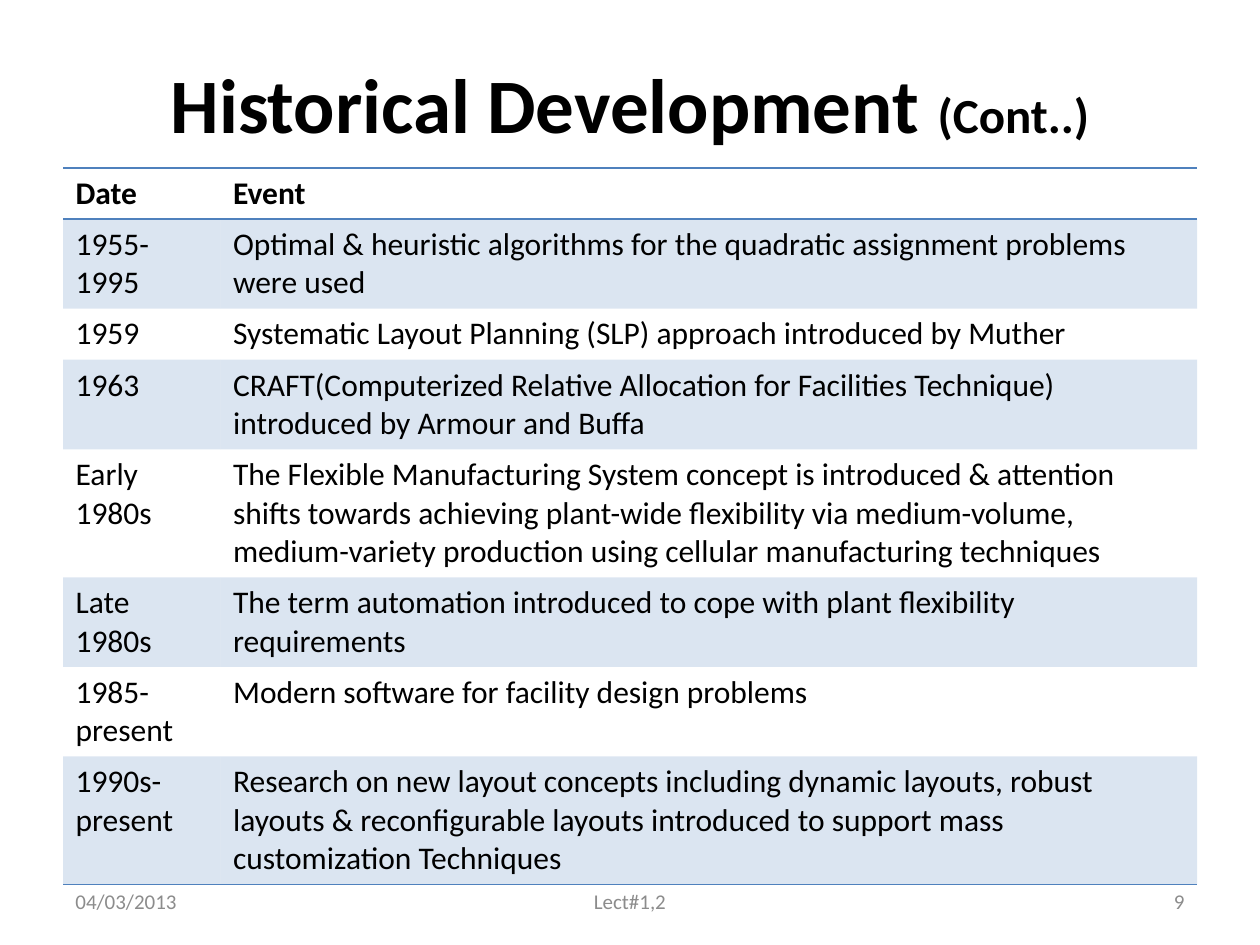
from dataclasses import dataclass
from typing import NamedTuple

from lxml.etree import SubElement
from pptx import Presentation
from pptx.dml.color import RGBColor
from pptx.enum.text import MSO_ANCHOR, PP_ALIGN
from pptx.oxml import parse_xml
from pptx.oxml.ns import nsdecls, qn
from pptx.util import Pt


@dataclass(frozen=True)
class Theme:
    font: str = "Calibri"
    text: str = "000000"
    muted: str = "8C8C8C"
    accent: str = "4F81BD"
    band_opacity: int = 20
    title_size: float = 44
    suffix_size: float = 28
    table_size: float = 18
    footer_size: float = 12


class Event(NamedTuple):
    date: str
    description: str


class FooterItem(NamedTuple):
    text: str
    left: float
    width: float
    alignment: PP_ALIGN


THEME = Theme()
MARGIN = 36
CONTENT_WIDTH = 648
TITLE_TOP, TITLE_HEIGHT = 21.6, 74.4
TABLE_TOP, TABLE_HEIGHT = 96, 403.9
COLUMN_WIDTHS = (90, 558)
ROW_HEIGHT = 29.2
FOOTER_TOP, FOOTER_HEIGHT = 500.5, 28.75
NO_GRID_STYLE = "{2D5ABB26-0587-4C30-8999-92F81FD0307C}"

HEADER = Event("Date", "Event")
EVENTS = (
    Event("1955-1995", "Optimal & heuristic algorithms for the quadratic "
          "assignment problems were used"),
    Event("1959", "Systematic Layout Planning (SLP) approach introduced by Muther"),
    Event("1963", "CRAFT(Computerized Relative Allocation for Facilities "
          "Technique) introduced by Armour and Buffa"),
    Event("Early 1980s", "The Flexible Manufacturing System concept is introduced "
          "& attention shifts towards achieving plant-wide flexibility via "
          "medium-volume, medium-variety production using cellular "
          "manufacturing techniques"),
    Event("Late 1980s", "The term automation introduced to cope with plant "
          "flexibility requirements"),
    Event("1985-present", "Modern software for facility design problems"),
    Event("1990s-present", "Research on new layout concepts including dynamic "
          "layouts, robust layouts & reconfigurable layouts introduced to "
          "support mass customization Techniques"),
)
FOOTER = (
    FooterItem("04/03/2013", 36, 168, PP_ALIGN.LEFT),
    FooterItem("Lect#1,2", 246, 228, PP_ALIGN.CENTER),
    FooterItem("9", 516, 168, PP_ALIGN.RIGHT),
)


def add_run(paragraph, text: str, size: float, color: str, bold: bool = False) -> None:
    run = paragraph.add_run()
    run.text = text
    run.font.name = THEME.font
    run.font.size = Pt(size)
    run.font.bold = bold
    run.font.color.rgb = RGBColor.from_string(color)


def add_title(slide) -> None:
    title = slide.shapes.title
    title.left, title.top = Pt(MARGIN), Pt(TITLE_TOP)
    title.width, title.height = Pt(CONTENT_WIDTH), Pt(TITLE_HEIGHT)
    title.text_frame.vertical_anchor = MSO_ANCHOR.MIDDLE
    paragraph = title.text_frame.paragraphs[0]
    paragraph.alignment = PP_ALIGN.CENTER
    add_run(paragraph, "Historical Development ", THEME.title_size, THEME.text, True)
    add_run(paragraph, "(Cont..)", THEME.suffix_size, THEME.text, True)


def set_borders(cell, *sides: str) -> None:
    """Rule the given sides, named in schema order: lnT before lnB."""
    properties = cell._tc.get_or_add_tcPr()
    for index, side in enumerate(sides):
        properties.insert(index, parse_xml(
            f'<a:{side} {nsdecls("a")} w="{Pt(1)}"><a:solidFill>'
            f'<a:srgbClr val="{THEME.accent}"/></a:solidFill></a:{side}>'))


def fill_band(cell) -> None:
    cell.fill.solid()
    cell.fill.fore_color.rgb = RGBColor.from_string(THEME.accent)
    color = cell._tc.tcPr.find(qn("a:solidFill")).find(qn("a:srgbClr"))
    SubElement(color, qn("a:alpha")).set("val", str(THEME.band_opacity * 1000))


def add_event_table(slide) -> None:
    rows = (HEADER, *EVENTS)
    frame = slide.shapes.add_table(
        len(rows), len(COLUMN_WIDTHS), Pt(MARGIN), Pt(TABLE_TOP),
        Pt(CONTENT_WIDTH), Pt(TABLE_HEIGHT))
    table = frame.table
    table._tbl.tblPr.find(qn("a:tableStyleId")).text = NO_GRID_STYLE
    for column, width in zip(table.columns, COLUMN_WIDTHS):
        column.width = Pt(width)
    for row_index, event in enumerate(rows):
        table.rows[row_index].height = Pt(ROW_HEIGHT)
        is_header = row_index == 0
        for cell, text in zip(table.rows[row_index].cells, event):
            add_run(cell.text_frame.paragraphs[0], text,
                    THEME.table_size, THEME.text, is_header)
            if row_index % 2:
                fill_band(cell)
            else:
                cell.fill.background()
            if is_header:
                set_borders(cell, "lnT", "lnB")
            elif row_index == len(rows) - 1:
                set_borders(cell, "lnB")
    frame.height = Pt(TABLE_HEIGHT)


def add_footer_item(slide, item: FooterItem) -> None:
    text_box = slide.shapes.add_textbox(
        Pt(item.left), Pt(FOOTER_TOP), Pt(item.width), Pt(FOOTER_HEIGHT))
    text_frame = text_box.text_frame
    text_frame.word_wrap = True
    text_frame.vertical_anchor = MSO_ANCHOR.MIDDLE
    paragraph = text_frame.paragraphs[0]
    paragraph.alignment = item.alignment
    add_run(paragraph, item.text, THEME.footer_size, THEME.muted)


def main() -> None:
    presentation = Presentation()
    presentation.slide_width, presentation.slide_height = Pt(720), Pt(540)
    slide = presentation.slides.add_slide(
        presentation.slide_layouts.get_by_name("Title Only"))
    add_title(slide)
    add_event_table(slide)
    for item in FOOTER:
        add_footer_item(slide, item)
    presentation.save("out.pptx")


if __name__ == "__main__":
    main()
